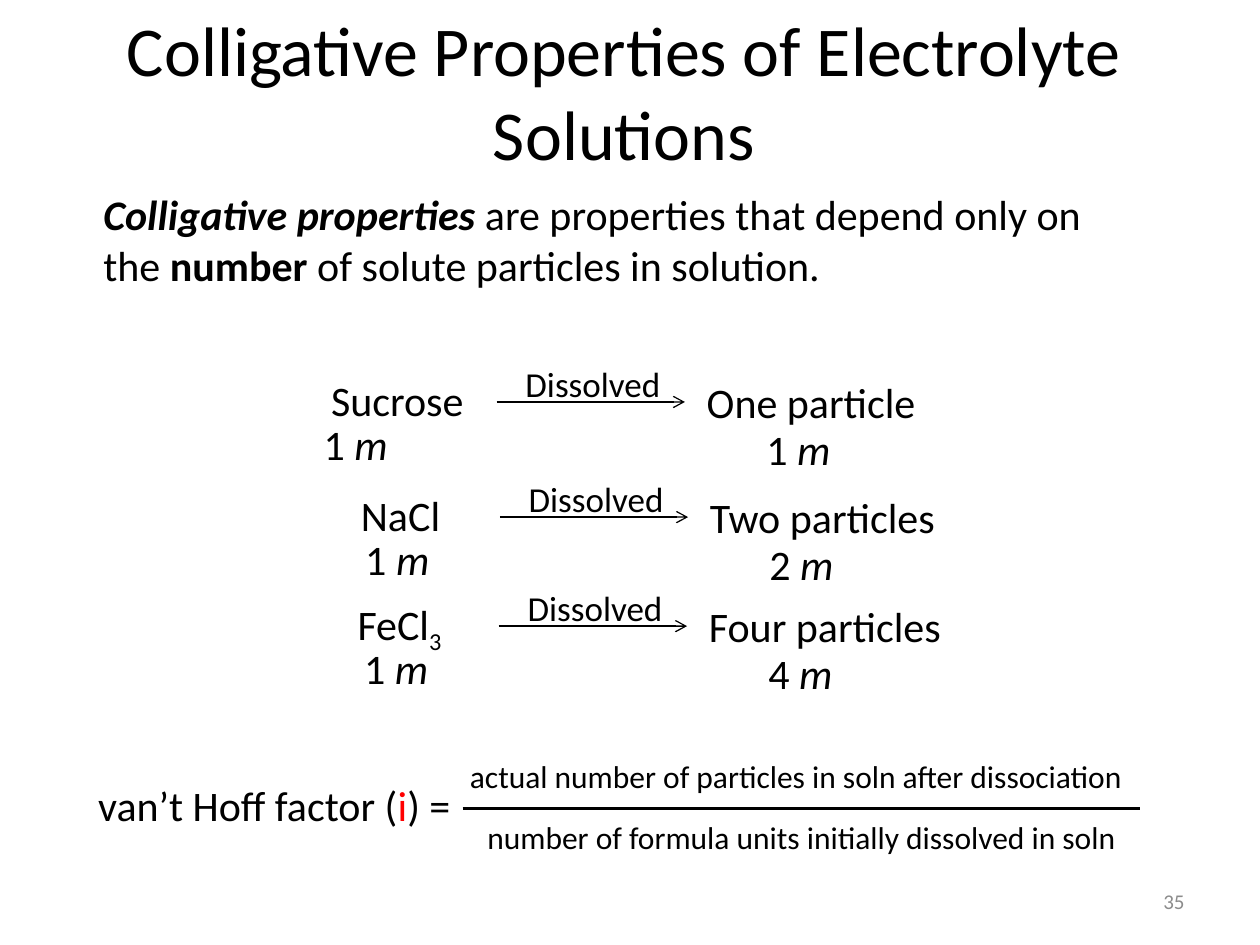
from dataclasses import dataclass

from lxml.etree import SubElement
from pptx import Presentation
from pptx.dml.color import RGBColor
from pptx.enum.shapes import MSO_CONNECTOR as Connector
from pptx.enum.text import MSO_ANCHOR as Anchor, MSO_AUTO_SIZE as AutoSize, PP_ALIGN as Align
from pptx.oxml.ns import qn
from pptx.util import Pt


@dataclass(frozen=True)
class Theme:
    font: str = "Calibri"
    ink: RGBColor = RGBColor(0x00, 0x00, 0x00)
    accent: RGBColor = RGBColor(0xFF, 0x00, 0x00)
    muted: RGBColor = RGBColor(0x8C, 0x8C, 0x8C)
    title: int = 40
    body: int = 24
    arrow_label: int = 20
    fraction: int = 18
    page_number: int = 12
    arrow_line: float = 0.75
    fraction_line: float = 2.25


class SlideBuilder:
    def __init__(self, slide, theme):
        self.theme = theme
        self.shapes = slide.shapes

    def text(self, left, top, width, height, parts, size, align=Align.LEFT,
             color=None, anchor=Anchor.TOP, wrap=True):
        """Add a text box; parts is a string or a list of (text, styles) pairs."""
        box = self.shapes.add_textbox(Pt(left), Pt(top), Pt(width), Pt(height))
        frame = box.text_frame
        frame.word_wrap = wrap
        frame.auto_size = AutoSize.SHAPE_TO_FIT_TEXT
        frame.vertical_anchor = anchor
        paragraph = frame.paragraphs[0]
        paragraph.alignment = align
        if isinstance(parts, str):
            parts = [(parts, "")]
        paragraph.text = parts[0][0]
        for words, _ in parts[1:]:
            paragraph.add_run().text = words
        for run, (_, styles) in zip(paragraph.runs, parts):
            self.format_run(run, styles.split(), size, color or self.theme.ink)

    def format_run(self, run, styles, size, color):
        font = run.font
        font.name = self.theme.font
        font.size = Pt(size)
        font.color.rgb = self.theme.accent if "accent" in styles else color
        font.bold = "bold" in styles
        font.italic = "italic" in styles
        if "subscript" in styles:
            run._r.get_or_add_rPr().set("baseline", "-25000")

    def line(self, left, top, length, weight, arrow=False):
        """Add a horizontal line, with an open arrowhead at its right end if asked."""
        connector = self.shapes.add_connector(
            Connector.STRAIGHT, Pt(left), Pt(top), Pt(left + length), Pt(top))
        connector.line.color.rgb = self.theme.ink
        connector.line.width = Pt(weight)
        if arrow:
            SubElement(connector.line._get_or_add_ln(), qn("a:tailEnd"), type="arrow")
        SubElement(connector._element.spPr, qn("a:effectLst"))

    def dissolution(self, left, top, solute, product, molality, indent):
        """Add one row, placed around the start of its arrow."""
        body = self.theme.body
        self.text(left - 106, top - 19.4, 98.6, 36, solute, body, Align.CENTER)
        self.line(left, top, 107.6, self.theme.arrow_line, arrow=True)
        self.text(left, top - 26, 110, 31.5, "Dissolved", self.theme.arrow_label, Align.CENTER)
        self.text(left + 113, top - 18, 155.5, 36, product, body)
        self.text(left + 147, top + 8.8, 58.3, 36, [(f"{molality} ", ""), ("m", "italic")], body)
        self.text(left - indent, top + 6, 58.3, 36, [("1 ", ""), ("m", "italic")], body)

    def fraction(self, numerator, denominator):
        slide_shapes = self.shapes
        self.shapes = slide_shapes.add_group_shape().shapes
        size = self.theme.fraction
        self.text(261.4, 429, 392.4, 29, numerator, size, wrap=False)
        self.text(271.4, 463.7, 378, 29, denominator, size, wrap=False)
        self.line(264.4, 462, 387.2, self.theme.fraction_line)
        self.shapes = slide_shapes


def main():
    presentation = Presentation()
    presentation.slide_width = Pt(720)
    presentation.slide_height = Pt(540)
    slide = presentation.slides.add_slide(presentation.slide_layouts[6])
    theme = Theme()
    builder = SlideBuilder(slide, theme)

    builder.text(516, 500.5, 168, 28.8, "35", theme.page_number, Align.RIGHT,
                 theme.muted, Anchor.MIDDLE)
    builder.text(47.5, 0, 618, 104.4, "Colligative Properties of Electrolyte Solutions",
                 theme.title, Align.CENTER)
    builder.text(52, 104.4, 600.5, 65.5, [
        ("Colligative properties", "bold italic"),
        (" are properties that depend only on the ", ""),
        ("number", "bold"),
        (" of solute particles in solution.", ""),
    ], theme.body)

    dissolutions = [
        (283.8, 229.7, "Sucrose", "One particle", 1, 106),
        (285.6, 295.5, "NaCl", "Two particles", 2, 84),
        (285, 357.8, [("FeCl", ""), ("3", "subscript")], "Four particles", 4, 84),
    ]
    for row in dissolutions:
        builder.dissolution(*row)

    builder.text(49, 442, 301.7, 36, [
        ("van’t Hoff factor (", ""), ("i", "accent"), (") =", ""),
    ], theme.body)
    builder.fraction("actual number of particles in soln after dissociation",
                     "number of formula units initially dissolved in soln")

    presentation.save("out.pptx")


if __name__ == "__main__":
    main()
